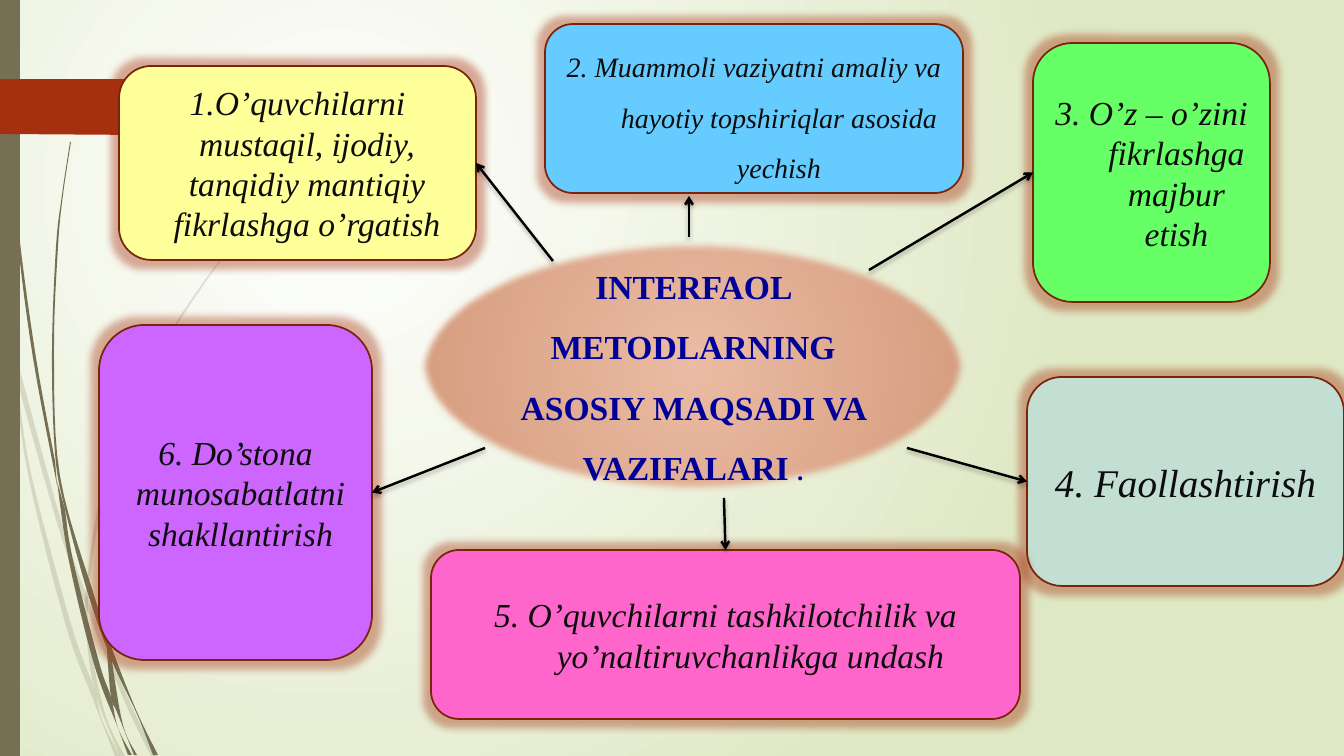
from dataclasses import dataclass
from typing import Any, Optional

from pptx import Presentation
from pptx.dml.color import RGBColor
from pptx.enum.shapes import MSO_CONNECTOR as Link, MSO_SHAPE as Preset
from pptx.enum.text import MSO_ANCHOR as Anchor, PP_ALIGN as Align
from pptx.oxml import parse_xml
from pptx.oxml.ns import nsdecls, qn
from pptx.util import Emu, Pt

PX = 914400 / 100.8
Point = tuple[float, float]


@dataclass(frozen=True)
class Theme:
    font: str = "Times New Roman"
    olive: str = "766F54"
    rust: str = "A53010"
    border: str = "7A240C"
    ink: str = "0D0D0D"
    navy: str = "000099"
    black: str = "000000"
    page_inner: str = "FFFFFF"
    page_outer: str = "DFE8C4"
    hub_inner: str = "EBBCA4"
    hub_outer: str = "D49A7C"
    small: int = 18
    medium: int = 20
    normal: int = 24
    large: int = 28


THEME = Theme()


@dataclass(frozen=True)
class Task:
    text: str
    left: int
    top: int
    width: int
    height: int
    color: str
    size: int = THEME.normal
    hanging: int = 0
    spacing: float = 1.0
    numbered: bool = False


@dataclass(frozen=True)
class Arrow:
    start: tuple[int, int]
    end: tuple[int, int]
    task: Optional[int] = None
    side: int = 0


@dataclass(frozen=True)
class Wisp:
    down: list[Point]
    up: list[Point]
    alpha: int = 100


TASKS = [
    Task("O’quvchilarni mustaqil, ijodiy, tanqidiy mantiqiy fikrlashga o’rgatish",
         119, 66, 357, 194, "FFFF99", hanging=19, numbered=True),
    Task("2. Muammoli vaziyatni amaliy va hayotiy topshiriqlar asosida yechish",
         545, 24, 418, 169, "66CCFF", THEME.medium, 50, 1.5),
    Task("3. O’z – o’zini fikrlashga majbur etish", 1033, 43, 237, 259, "66FF66", hanging=50),
    Task("4. Faollashtirish", 1027, 377, 317, 209, "C3DED3", THEME.large),
    Task("5. O’quvchilarni tashkilotchilik va yo’naltiruvchanlikga undash",
         431, 550, 589, 169, "FF66CC", hanging=50),
    Task("6. Do’stona munosabatlatni shakllantirish", 99, 325, 273, 335, "CC66FF", hanging=10),
]

ARROWS = [
    Arrow((689, 237), (689, 196)),
    Arrow((869, 270), (1033, 172), 2, 1),
    Arrow((553, 261), (476, 162), 0, 3),
    Arrow((485, 448), (372, 492), 5, 3),
    Arrow((724, 498), (726, 550), 4, 0),
    Arrow((907, 448), (1027, 481), 3, 1),
]

# Each wisp is a ribbon: knots down one edge, then back up the other
WISPS = [
    Wisp([(0, 301), (10, 347), (28, 474), (66, 626), (93, 699), (115, 756)],
         [(120, 756), (102, 720), (94, 688), (71, 624), (31, 473), (17, 379), (9, 325), (0, 284)], 20),
    Wisp([(14, 348), (17, 379), (58, 526), (85, 604), (124, 700), (151, 756)],
         [(156, 756), (128, 698), (93, 612), (62, 524), (14, 348)], 20),
    Wisp([(314, 154), (291, 176), (230, 246), (159, 351), (108, 465), (86, 589), (88, 651), (97, 698), (120, 756)],
         [(125, 756), (106, 717), (92, 651), (89, 589), (111, 466), (161, 352), (231, 247), (292, 176), (314, 155)], 20),
    Wisp([(3, 0), (4, 48), (7, 111), (17, 235), (33, 358), (57, 485)],
         [(55, 461), (36, 358), (19, 234), (8, 110), (5, 48), (4, 0)]),
    Wisp([(70, 142), (62, 195), (56, 247), (52, 352), (55, 453), (65, 509), (89, 597), (112, 661), (137, 714), (153, 755)],
         [(158, 755), (137, 712), (114, 654), (94, 595), (60, 476), (54, 352), (58, 247), (63, 195), (71, 142)]),
    Wisp([(57, 481), (69, 561), (94, 664), (118, 728), (128, 755)],
         [(132, 755), (118, 728), (111, 697), (99, 662), (73, 560), (65, 509)]),
    Wisp([(107, 650), (111, 697), (117, 712), (134, 755)],
         [(137, 755), (123, 725), (112, 661), (111, 646), (107, 636)]),
]
TAB = [(0, 79), (147, 79), (150, 80), (175, 105), (175, 108), (150, 134), (147, 135), (0, 134)]


def px(length: float) -> Emu:
    return Emu(round(length * PX))


def element(tag: str, body: str = "", **attributes: Any) -> Any:
    listed = "".join(f' {name}="{value}"' for name, value in attributes.items())
    return parse_xml(f"<a:{tag} {nsdecls('a')}{listed}>{body}</a:{tag}>")


def tint(color: str, alpha: int) -> str:
    return f'<a:srgbClr val="{color}"><a:alpha val="{alpha * 1000}"/></a:srgbClr>'


def apply(target: Any, values: dict[str, Any]) -> None:
    for name, value in values.items():
        setattr(target, name, value)


def paint(fill: Any, color: str) -> None:
    fill.solid()
    fill.fore_color.rgb = RGBColor.from_string(color)


def paint_radial(fill: Any, owner: Any, colors: tuple[str, str], center: dict[str, int]) -> None:
    fill.gradient()
    for stop, color in zip(fill.gradient_stops, colors):
        stop.color.rgb = RGBColor.from_string(color)
    gradient = owner.find(".//" + qn("a:gradFill"))
    gradient.remove(gradient.find(qn("a:lin")))
    path = element("path", **{"path": "circle"})
    path.append(element("fillToRect", **center))
    gradient.append(path)


def add_effect(shape: Any, effect: Any) -> None:
    shape.shadow.inherit = False
    shape._element.spPr.find(qn("a:effectLst")).append(effect)


def smooth(knots: list[Point], steps: int = 6) -> list[Point]:
    """Points of a Catmull-Rom curve through the knots."""
    ends = [knots[0], *knots, knots[-1]]
    points = [knots[0]]
    for a, b, c, d in zip(ends, ends[1:], ends[2:], ends[3:]):
        for t in (step / steps for step in range(1, steps + 1)):
            x, y = ((2 * q + (r - p) * t + (2 * p - 5 * q + 4 * r - s) * t ** 2
                     + (3 * q - p - 3 * r + s) * t ** 3) / 2 for p, q, r, s in zip(a, b, c, d))
            points.append((x, y))
    return points


def draw_outline(page: Any, points: list[Point], color: str, alpha: int = 100) -> None:
    corners = [(px(x), px(y)) for x, y in points]
    builder = page.shapes.build_freeform(*corners[0], scale=1.0)
    builder.add_line_segments(corners[1:], close=True)
    shape = builder.convert_to_shape()
    shape.shadow.inherit = False
    paint(shape.fill, color)
    shape.line.fill.background()
    if alpha < 100:
        shape._element.spPr.find(".//" + qn("a:srgbClr")).append(element("alpha", val=alpha * 1000))


def add_text(para: Any, text: str, color: str, values: dict[str, Any]) -> None:
    span = para.add_run()
    span.text = text
    apply(span.font, {"name": THEME.font, **values})
    span.font.color.rgb = RGBColor.from_string(color)


def first_para(shape: Any, spacing: float) -> Any:
    apply(shape.text_frame, {"word_wrap": True, "vertical_anchor": Anchor.MIDDLE})
    para = shape.text_frame.paragraphs[0]
    apply(para, {"alignment": Align.CENTER, "line_spacing": spacing})
    return para


def draw_hub(page: Any) -> None:
    hub = page.shapes.add_shape(Preset.OVAL, px(419), px(240), px(548), px(253))
    paint_radial(hub.fill, hub._element, (THEME.hub_inner, THEME.hub_outer), dict.fromkeys("ltrb", 50000))
    hub.line.fill.background()
    add_effect(hub, element("softEdge", rad=63500))
    para = first_para(hub, 1.5)
    for text, size in (("INTERFAOL METODLARNING ASOSIY MAQSADI VA VAZIFALARI ", THEME.normal), (".", THEME.small)):
        add_text(para, text, THEME.navy, {"size": Pt(size), "bold": True})


def draw_task(page: Any, task: Task) -> Any:
    box = page.shapes.add_shape(Preset.ROUNDED_RECTANGLE, *map(px, (task.left, task.top, task.width, task.height)))
    paint(box.fill, task.color)
    paint(box.line.fill, THEME.border)
    box.line.width = Pt(1.25)
    add_effect(box, element("glow", tint(THEME.rust, 40), rad=139700))
    para = first_para(box, task.spacing)
    add_text(para, task.text, THEME.ink, {"size": Pt(task.size), "italic": True})
    if task.hanging:
        margins = para._p.get_or_add_pPr()
        margins.set("marL", str(px(task.hanging)))
        margins.set("indent", str(-px(task.hanging)))
        if task.numbered:
            margins.append(element("buAutoNum", type="arabicPeriod"))
    return box


def draw_arrow(page: Any, arrow: Arrow, boxes: list[Any]) -> None:
    line = page.shapes.add_connector(Link.STRAIGHT, *map(px, (*arrow.start, *arrow.end)))
    if arrow.task is not None:
        line.end_connect(boxes[arrow.task], arrow.side)
    paint(line.line.fill, THEME.black)
    line.line.width = Pt(1.75)
    line.line._get_or_add_ln().append(element("tailEnd", type="arrow"))
    effects = element("effectLst")
    effects.append(element("outerShdw", tint(THEME.black, 25), blurRad=Pt(3), dist=Pt(2), dir=5400000))
    line._element.spPr.append(effects)


def main() -> None:
    deck = Presentation()
    apply(deck, {"slide_width": px(1344), "slide_height": px(756)})
    page = deck.slides.add_slide(deck.slide_layouts[6])

    # Backdrop
    paint_radial(page.background.fill, page.element, (THEME.page_inner, THEME.page_outer),
                 {"l": 50000, "t": 50000, "r": 100000, "b": 100000})
    for wisp in WISPS:
        draw_outline(page, smooth(wisp.down) + smooth(wisp.up), THEME.olive, wisp.alpha)
    band = page.shapes.add_shape(Preset.RECTANGLE, 0, 0, px(20), px(756))
    band.shadow.inherit = False
    paint(band.fill, THEME.olive)
    band.line.fill.background()
    draw_outline(page, TAB, THEME.rust)

    # Hub, its six tasks and the arrows between them
    draw_hub(page)
    boxes = [draw_task(page, task) for task in TASKS]
    for arrow in ARROWS:
        draw_arrow(page, arrow, boxes)

    deck.save("out.pptx")


if __name__ == "__main__":
    main()
